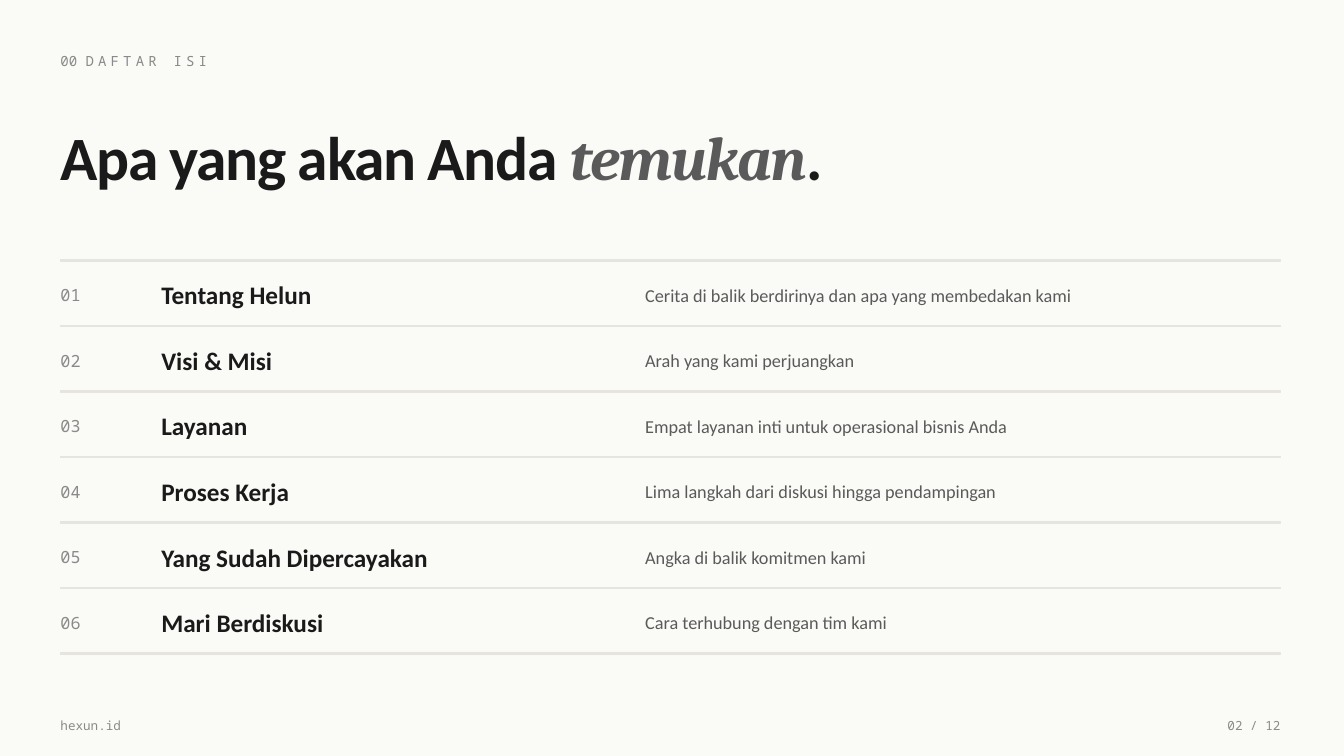
from dataclasses import dataclass

from pptx import Presentation
from pptx.dml.color import RGBColor
from pptx.enum import shapes, text
from pptx.util import Emu, Pt

PX = 9144  # EMU per px, 100 px to the inch


@dataclass(frozen=True)
class Style:
    font: str
    size: int
    color: str
    bold: bool = False
    italic: bool = False
    spacing: int = 0  # hundredths of a point


@dataclass(frozen=True)
class Theme:
    background: str = "FAFAF7"
    rule: str = "E5E4DF"
    label: Style = Style("Noto Sans Mono", 10, "8A8A8A")
    label_wide: Style = Style("Noto Sans Mono", 10, "8A8A8A", spacing=300)
    title: Style = Style("Calibri", 44, "1A1A1A", bold=True, spacing=-100)
    accent: Style = Style("Cambria", 44, "5A5A5A", bold=True, italic=True, spacing=-100)
    number: Style = Style("Noto Sans Mono", 12, "8A8A8A")
    topic: Style = Style("Calibri", 18, "1A1A1A", bold=True)
    summary: Style = Style("Calibri", 13, "5A5A5A")
    footer: Style = Style("Noto Sans Mono", 9, "8A8A8A")


@dataclass(frozen=True)
class Box:
    left: int
    top: int
    width: int
    height: int

    def emu(self) -> list[Emu]:
        return [Emu(n * PX) for n in (self.left, self.top, self.width, self.height)]


@dataclass(frozen=True)
class Chapter:
    topic: str
    summary: str


THEME = Theme()
LEFT, WIDTH = 60, 1210
LIST_TOP, ROW = 260, 65
RULE_LIFT = 2  # rules sit just above each row's edge

CHAPTERS = [
    Chapter("Tentang Helun", "Cerita di balik berdirinya dan apa yang membedakan kami"),
    Chapter("Visi & Misi", "Arah yang kami perjuangkan"),
    Chapter("Layanan", "Empat layanan inti untuk operasional bisnis Anda"),
    Chapter("Proses Kerja", "Lima langkah dari diskusi hingga pendampingan"),
    Chapter("Yang Sudah Dipercayakan", "Angka di balik komitmen kami"),
    Chapter("Mari Berdiskusi", "Cara terhubung dengan tim kami"),
]


def set_font(font, style: Style) -> None:
    font.name, font.size = style.font, Pt(style.size)
    font.bold, font.italic = style.bold, style.italic
    font.color.rgb = RGBColor.from_string(style.color)


def write(shape, spans: list[tuple[str, Style]], align=text.PP_ALIGN.LEFT) -> None:
    frame = shape.text_frame
    frame.word_wrap = True
    frame.auto_size = text.MSO_AUTO_SIZE.NONE
    frame.vertical_anchor = text.MSO_ANCHOR.MIDDLE
    frame.margin_left = frame.margin_right = frame.margin_top = frame.margin_bottom = 0
    para = frame.paragraphs[0]
    para.alignment = align
    base = spans[0][1]
    set_font(para.font, base)
    for words, style in spans:
        span = para.add_run()
        span.text = words
        if style != base:
            set_font(span.font, style)
        if style.spacing:
            span.font._element.set("spc", str(style.spacing))


def add_text(page, box: Box, spans: list[tuple[str, Style]], align=text.PP_ALIGN.LEFT) -> None:
    write(page.shapes.add_textbox(*box.emu()), spans, align)


def add_rule(page, top: int) -> None:
    rule = page.shapes.add_shape(shapes.MSO_SHAPE.RECTANGLE, *Box(LEFT, top, WIDTH, 1).emu())
    rule.shadow.inherit = False
    rule.fill.solid()
    rule.fill.fore_color.rgb = rule.line.color.rgb = RGBColor.from_string(THEME.rule)
    rule.line.width = Pt(1)


def add_chapter(page, index: int, chapter: Chapter) -> None:
    top = LIST_TOP + index * ROW
    add_rule(page, top + ROW - RULE_LIFT)
    add_text(page, Box(LEFT, top, 80, ROW), [(f"{index + 1:02d}", THEME.number)])
    add_text(page, Box(160, top, 450, ROW), [(chapter.topic, THEME.topic)])
    add_text(page, Box(640, top, 630, ROW), [(chapter.summary, THEME.summary)])


def main() -> None:
    deck = Presentation()
    deck.slide_width, deck.slide_height = Emu(1333 * PX), Emu(750 * PX)
    page = deck.slides.add_slide(deck.slide_layouts.get_by_name("Title Only"))
    page.background.fill.solid()
    page.background.fill.fore_color.rgb = RGBColor.from_string(THEME.background)

    # Section label and title
    add_text(page, Box(LEFT, 45, 800, 30),
             [("00 ", THEME.label), ("DAFTAR ISI", THEME.label_wide)])
    title = page.shapes.title
    title.left, title.top, title.width, title.height = Box(LEFT, 110, 1100, 90).emu()
    write(title, [("Apa yang akan Anda ", THEME.title), ("temukan", THEME.accent),
                  (".", THEME.title)])

    # Table of contents
    add_rule(page, LIST_TOP - RULE_LIFT)
    for index, chapter in enumerate(CHAPTERS):
        add_chapter(page, index, chapter)

    # Footer
    add_text(page, Box(LEFT, 705, 200, 30), [("hexun.id", THEME.footer)])
    add_text(page, Box(1190, 705, 80, 30), [("02 / 12", THEME.footer)], text.PP_ALIGN.RIGHT)

    deck.save("out.pptx")


if __name__ == "__main__":
    main()
